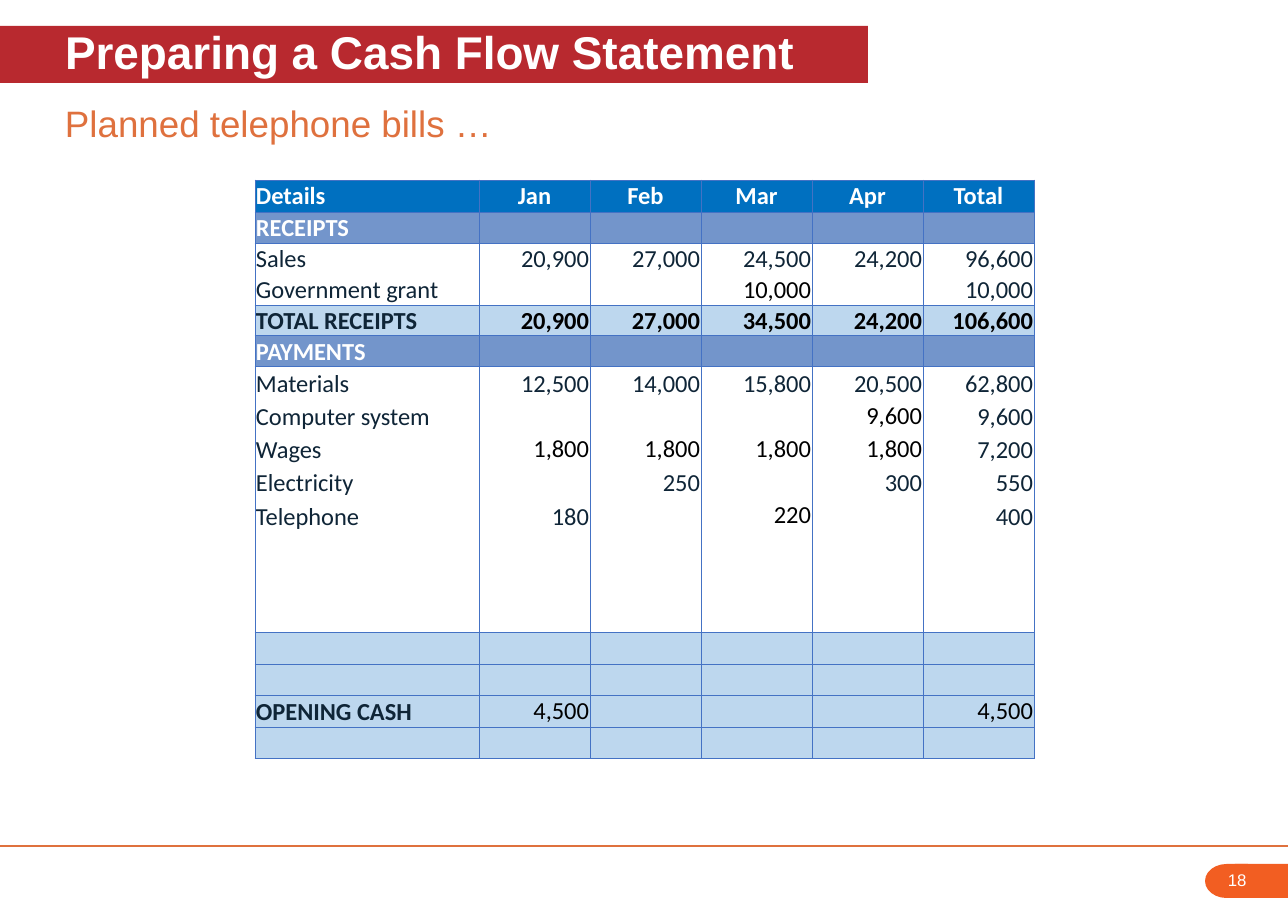
from lxml import etree
from pptx import Presentation
from pptx.dml.color import RGBColor
from pptx.enum.shapes import MSO_CONNECTOR, MSO_SHAPE
from pptx.enum.text import MSO_ANCHOR, PP_ALIGN
from pptx.oxml.ns import qn
from pptx.util import Pt

PX = 8300
RECT, DELAY = MSO_SHAPE.RECTANGLE, MSO_SHAPE.FLOWCHART_DELAY
STRAIGHT = MSO_CONNECTOR.STRAIGHT
TOP, MIDDLE = MSO_ANCHOR.TOP, MSO_ANCHOR.MIDDLE
LEFT, CENTER, RIGHT = PP_ALIGN.LEFT, PP_ALIGN.CENTER, PP_ALIGN.RIGHT

WHITE = RGBColor(0xFF, 0xFF, 0xFF)
BLACK = RGBColor(0x00, 0x00, 0x00)
NAVY = RGBColor(0x0F, 0x25, 0x37)
RED = RGBColor(0xB8, 0x29, 0x2F)
RUST = RGBColor(0xDF, 0x71, 0x3E)
ORANGE = RGBColor(0xF2, 0x5E, 0x22)
HEADER_BLUE = RGBColor(0x00, 0x70, 0xC0)
SECTION_BLUE = RGBColor(0x73, 0x95, 0xCB)
TOTAL_BLUE = RGBColor(0xBD, 0xD7, 0xEE)
BORDER_BLUE = RGBColor(0x44, 0x72, 0xC4)


def write(tf, text, size, color, bold=False, font="Arial", align=LEFT):
    tf.text = text
    p = tf.paragraphs[0]
    p.alignment = align
    for r in p.runs:
        r.font.name, r.font.size, r.font.bold = font, Pt(size), bold
        r.font.color.rgb = color


def set_border(cell, side, visible):
    """Add one side's border; call in the order L, R, T, B, before the fill."""
    ln = etree.SubElement(cell._tc.get_or_add_tcPr(), qn("a:ln" + side), w=str(Pt(0.5)))
    if visible:
        fill = etree.SubElement(ln, qn("a:solidFill"))
        etree.SubElement(fill, qn("a:srgbClr"), val=str(BORDER_BLUE))
    else:
        etree.SubElement(ln, qn("a:noFill"))


prs = Presentation()
prs.slide_width, prs.slide_height = 1288 * PX, 911 * PX
s = prs.slides.add_slide(prs.slide_layouts[5])

# Footer rule and page number
rule = s.shapes.add_connector(STRAIGHT, 0, 846 * PX, 1288 * PX, 846 * PX)
rule.line.color.rgb = RUST
rule.line.width = Pt(0.75)
etree.SubElement(rule._element.spPr, qn("a:effectLst"))

for preset, x, w, angle in ((DELAY, 1205, 43, 180), (RECT, 1235, 53, 0)):
    sp = s.shapes.add_shape(preset, x * PX, 864 * PX, w * PX, 34 * PX)
    sp.rotation = angle
    sp.shadow.inherit = False
    sp.fill.solid()
    sp.fill.fore_color.rgb = ORANGE
    sp.line.fill.background()

number = s.shapes.add_textbox(1217 * PX, 864 * PX, 62 * PX, 31 * PX)
number.text_frame.word_wrap = True
write(number.text_frame, "18", 11, WHITE)

# Title and subtitle
title = s.shapes.title
title.left, title.top, title.width, title.height = 0, 26 * PX, 868 * PX, 57 * PX
title.fill.solid()
title.fill.fore_color.rgb = RED
subtitle = s.shapes.add_textbox(0, 98 * PX, 1288 * PX, 56 * PX)
for sp, text, size, color, bold in (
    (title, "Preparing a Cash Flow Statement", 30, WHITE, True),
    (subtitle, "Planned telephone bills …", 24, RUST, False),
):
    tf = sp.text_frame
    tf.word_wrap = True
    tf.vertical_anchor = MIDDLE
    tf.margin_left, tf.margin_top, tf.margin_right, tf.margin_bottom = 65 * PX, 0, 0, 6 * PX
    write(tf, text, size, color, bold)

# Cash flow table: kind of row, then its cells
EMPTY = [""] * 6
ROWS = [
    ("header", ["Details", "Jan", "Feb", "Mar", "Apr", "Total"]),
    ("section", ["RECEIPTS", "", "", "", "", ""]),
    ("item", ["Sales", "20,900", "27,000", "24,500", "24,200", "96,600"]),
    ("item", ["Government grant", "", "", "10,000", "", "10,000"]),
    ("total", ["TOTAL RECEIPTS", "20,900", "27,000", "34,500", "24,200", "106,600"]),
    ("section", ["PAYMENTS", "", "", "", "", ""]),
    ("item", ["Materials", "12,500", "14,000", "15,800", "20,500", "62,800"]),
    ("item", ["Computer system", "", "", "", "9,600", "9,600"]),
    ("item", ["Wages", "1,800", "1,800", "1,800", "1,800", "7,200"]),
    ("item", ["Electricity", "", "250", "", "300", "550"]),
    ("item", ["Telephone", "180", "", "220", "", "400"]),
    ("item", EMPTY),
    ("item", EMPTY),
    ("item", EMPTY),
    ("balance", EMPTY),
    ("balance", EMPTY),
    ("balance", ["OPENING CASH", "4,500", "", "", "", "4,500"]),
    ("balance", EMPTY),
]
FILLS = {"header": HEADER_BLUE, "section": SECTION_BLUE, "item": WHITE,
         "total": TOTAL_BLUE, "balance": TOTAL_BLUE}
BLACK_ITEMS = {(3, 3), (7, 4), (8, 1), (8, 2), (8, 3), (8, 4), (10, 3)}
HEIGHTS = [32] + [31] * 5 + [33, 33, 33, 34] * 2 + [32, 31] * 2
WIDTHS = [224] + [111] * 5

frame = s.shapes.add_table(len(ROWS), len(WIDTHS), 255 * PX, 180 * PX,
                           sum(WIDTHS) * PX, sum(HEIGHTS) * PX)
table = frame.table
for column, width in zip(table.columns, WIDTHS):
    column.width = width * PX
for row, height in zip(table.rows, HEIGHTS):
    row.height = height * PX

kinds = [kind for kind, _ in ROWS]
for i, (kind, texts) in enumerate(ROWS):
    joins_above = kind == "item" == kinds[i - 1]
    joins_below = kind == "item" == kinds[min(i + 1, len(kinds) - 1)]
    for j, text in enumerate(texts):
        cell = table.cell(i, j)
        cell.margin_left = cell.margin_top = cell.margin_right = PX
        cell.margin_bottom = 0
        for side, visible in (("L", True), ("R", True),
                              ("T", not joins_above), ("B", not joins_below)):
            set_border(cell, side, visible)
        cell.fill.solid()
        cell.fill.fore_color.rgb = FILLS[kind]

        is_black = (i, j) in BLACK_ITEMS or (j > 0 and kind in ("total", "balance"))
        cell.vertical_anchor = TOP if is_black else MIDDLE
        if kind in ("header", "section"):
            color = WHITE
        else:
            color = BLACK if is_black else NAVY
        bold = kind in ("header", "section", "total") or (kind == "balance" and j == 0)
        align = LEFT if j == 0 else CENTER if kind == "header" else RIGHT
        write(cell.text_frame, text, 16, color, bold, "Calibri", align)
        if not text:
            p = cell.text_frame.paragraphs[0]
            etree.SubElement(p._p, qn("a:endParaRPr"), sz="1600")

prs.save("out.pptx")
